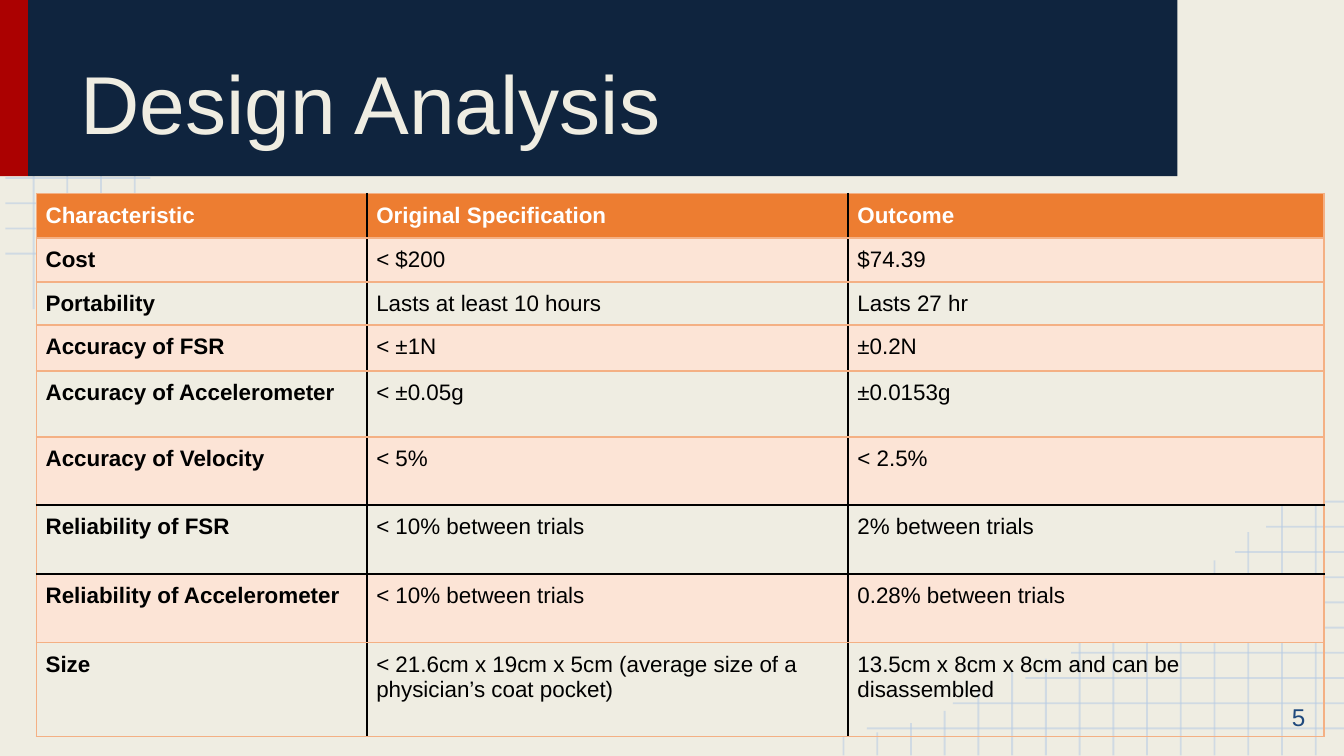
"""Builds the Design Analysis slide: a gridded backdrop, a banner and a specification table."""
from lxml import etree
from pptx import Presentation
from pptx.dml.color import RGBColor
from pptx.enum.shapes import MSO_CONNECTOR, MSO_SHAPE
from pptx.enum.text import MSO_ANCHOR, PP_ALIGN
from pptx.oxml.ns import qn
from pptx.util import Inches, Pt

COLORS = {
    "paper": "EFEDE2", "grid": "B7CCE4", "red": "AB0101", "navy": "0F243E",
    "number": "1F497D", "header": "ED7D31", "band": "FCE4D6",
    "rule": "F4B084", "black": "000000", "white": "FFFFFF",
}


def add_text(frame, text, size, color, bold=False, align=PP_ALIGN.LEFT):
    frame.word_wrap = True
    frame.margin_left = frame.margin_right = Inches(0.1)
    frame.margin_top = frame.margin_bottom = Inches(0.1)
    paragraph = frame.paragraphs[0]
    paragraph.alignment = align
    run = paragraph.add_run()
    run.text = text
    run.font.name = "Arial"
    run.font.size = Pt(size)
    run.font.bold = bold
    run.font.color.rgb = RGBColor.from_string(COLORS[color])


def add_border(cell, side, color):
    border = etree.SubElement(cell._tc.get_or_add_tcPr(), qn(f"a:ln{side}"), w=str(Pt(1)))
    solid = etree.SubElement(border, qn("a:solidFill"))
    etree.SubElement(solid, qn("a:srgbClr"), val=COLORS[color])


prs = Presentation()
prs.slide_width = Inches(10)
prs.slide_height = Inches(10) * 9 // 16
slide = prs.slides.add_slide(prs.slide_layouts[5])
slide.background.fill.solid()
slide.background.fill.fore_color.rgb = RGBColor.from_string(COLORS["paper"])

row_ends = [3.59, 2.95, 2.41, 2.07, 1.67, 1.37, 1.12, 0.85, 0.62, 0.32]
column_ends = [2.3, 2.03, 1.66, 1.45, 1.29, 1.16, 0.99, 0.86,
               0.72, 0.62, 0.48, 0.33, 0.24, 0.17, 0.14]
grid = [(0.04, 0.2 + 0.1875 * i, end, 0.2 + 0.1875 * i) for i, end in enumerate(row_ends)]
grid += [(0.25 + 0.251 * i, end, 0.25 + 0.251 * i, 0) for i, end in enumerate(column_ends)]
opposite_grid = [(10.04 - x1, 5.62 - y1, 10.04 - x2, 5.62 - y2) for x1, y1, x2, y2 in grid]
for ends in grid + opposite_grid:
    grid_line = slide.shapes.add_connector(MSO_CONNECTOR.STRAIGHT, *[Inches(v) for v in ends])
    grid_line.line.width = Pt(1)
    grid_line.line.color.rgb = RGBColor.from_string(COLORS["grid"])
    tint = grid_line.line._ln.find(".//" + qn("a:srgbClr"))
    etree.SubElement(tint, qn("a:alpha"), val="54000")
    etree.SubElement(grid_line._element.spPr, qn("a:effectLst"))

for left, width, color in [(0, 0.21, "red"), (0.21, 8.55, "navy")]:
    banner = slide.shapes.add_shape(
        MSO_SHAPE.RECTANGLE, Inches(left), Inches(-0.01), Inches(width), Inches(1.32))
    banner.shadow.inherit = False
    banner.fill.solid()
    banner.fill.fore_color.rgb = RGBColor.from_string(COLORS[color])
    banner.line.fill.background()

title = slide.shapes.title
title.left, title.top, title.width, title.height = [Inches(v) for v in (0.5, 0.11, 8, 1.11)]
add_text(title.text_frame, "Design Analysis", 44, "paper")
title.text_frame.vertical_anchor = MSO_ANCHOR.BOTTOM
slide.shapes._spTree.append(title._element)

page_number = slide.shapes.add_textbox(Inches(9.21), Inches(5.05), Inches(0.6), Inches(0.57))
add_text(page_number.text_frame, "5", 13, "number", align=PP_ALIGN.RIGHT)
page_number.text_frame.vertical_anchor = MSO_ANCHOR.MIDDLE

specifications = [
    ("Characteristic", "Original Specification", "Outcome"),
    ("Cost", "< $200", "$74.39"),
    ("Portability", "Lasts at least 10 hours", "Lasts 27 hr"),
    ("Accuracy of FSR", "< ±1N", "±0.2N"),
    ("Accuracy of Accelerometer", "< ±0.05g", "±0.0153g"),
    ("Accuracy of Velocity", "< 5%", "< 2.5%"),
    ("Reliability of FSR", "< 10% between trials", "2% between trials"),
    ("Reliability of Accelerometer", "< 10% between trials", "0.28% between trials"),
    ("Size", "< 21.6cm x 19cm x 5cm (average size of a physician’s coat pocket)",
     "13.5cm x 8cm x 8cm and can be disassembled"),
]
column_widths = [2.46, 3.58, 3.54]
row_heights = [0.33, 0.33, 0.32, 0.34, 0.49, 0.51, 0.51, 0.51, 0.7]
black_rules = (6, 7)

table = slide.shapes.add_table(
    len(row_heights), len(column_widths), Inches(0.27), Inches(1.44),
    Inches(sum(column_widths)), Inches(sum(row_heights))).table
table.first_row = table.horz_banding = False
for column, width in zip(table.columns, column_widths):
    column.width = Inches(width)
for r, (height, texts) in enumerate(zip(row_heights, specifications)):
    table.rows[r].height = Inches(height)
    for c, text in enumerate(texts):
        cell = table.cell(r, c)
        add_text(cell.text_frame, text, 12, "black" if r else "white", bold=r == 0 or c == 0)
        cell.margin_left = cell.margin_right = cell.margin_top = Inches(0.07)
        cell.margin_bottom = Inches(0.05)
        add_border(cell, "L", "black" if c > 0 else "rule")
        add_border(cell, "R", "black" if c < 2 else "rule")
        add_border(cell, "T", "black" if r in black_rules else "rule")
        add_border(cell, "B", "black" if r + 1 in black_rules else "rule")
        if r == 0 or r % 2:
            cell.fill.solid()
            cell.fill.fore_color.rgb = RGBColor.from_string(COLORS["band" if r else "header"])
        else:
            cell.fill.background()

prs.save("out.pptx")
